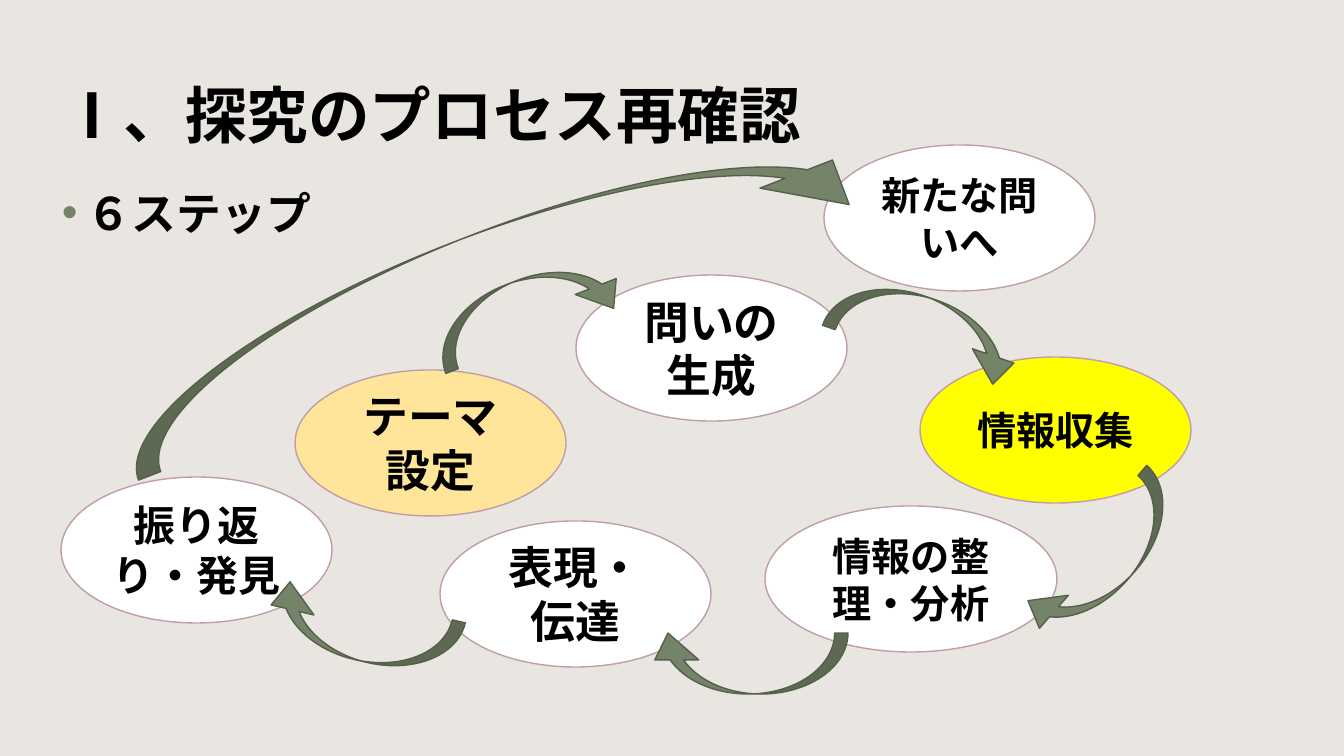
from lxml import etree
from pptx import Presentation
from pptx import util as u
from pptx.dml.color import RGBColor
from pptx.enum import lang, shapes, text
from pptx.oxml import ns

PX = 914400 / 100.8
COLORS = {
    "page": "E9E5E1", "text": "000000", "white": "FFFFFF", "yellow": "FFFF00",
    "cream": "FFE599", "rim": "C19DA7", "green": "758468", "dark": "55604B",
}
TITLE = ("Ⅰ、探究のプロセス再確認", (50, 40, 1202, 146), 44, "Noto Sans CJK JP")
SUBTITLE = ("６ステップ", (50, 166, 1243, 511), 32, "Arial")
INDENT = 25
STEP_WIDTH, STEP_HEIGHT = 271, 146
# wording, left, top, width, size, fill
STEPS = [
    ("問いの生成", 576, 275, STEP_WIDTH, 32, "white"),
    ("情報収集", 920, 357, STEP_WIDTH, 28, "yellow"),
    ("情報の整理・分析", 765, 506, 292, 28, "white"),
    ("表現・伝達", 440, 521, STEP_WIDTH, 32, "white"),
    ("テーマ設定", 295, 370, STEP_WIDTH, 32, "cream"),
    ("新たな問いへ", 824, 145, STEP_WIDTH, 28, "white"),
    ("振り返り・発見", 61, 477, STEP_WIDTH, 30, "white"),
]
SMALL, LARGE = (202, 61), (801, 108)
# left, top, size, rotation
ARROWS = [
    (428, 278, SMALL, 338.8),
    (827, 299, SMALL, 19.1),
    (646, 633, SMALL, 180),
    (1002, 531, SMALL, 131.3),
    (259, 599, SMALL, 193.2),
    (92, 231, LARGE, 338.8),
]
ARROW_BEND = (0.22, 0.72, 0.44)


def px(*lengths):
    return [u.Emu(round(length * PX)) for length in lengths]


def color(name):
    return RGBColor.from_string(COLORS[name])


def write(para, wording, size, face):
    span = para.add_run()
    span.text = wording
    font = span.font
    font.size, font.bold, font.name = u.Pt(size), True, face
    font.color.rgb = color("text")
    font.language_id = lang.MSO_LANGUAGE_ID.JAPANESE
    etree.SubElement(span._r.get_or_add_rPr(), ns.qn("a:ea"), typeface=face)


def add_heading(page, wording, place, size, face, anchor):
    frame = page.shapes.add_textbox(*px(*place)).text_frame
    frame.word_wrap = True
    frame.vertical_anchor = anchor
    frame.margin_left, frame.margin_top, frame.margin_right, frame.margin_bottom = px(12, 12, 12, 10)
    para = frame.paragraphs[0]
    write(para, wording, size, face)
    return para


def add_bullet(para):
    (indent,) = px(INDENT)
    props = para._p.get_or_add_pPr()
    props.set("marL", str(indent))
    props.set("indent", str(-indent))
    tint = etree.SubElement(props, ns.qn("a:buClr"))
    etree.SubElement(tint, ns.qn("a:srgbClr"), val=COLORS["green"])
    etree.SubElement(props, ns.qn("a:buFont"), typeface="Arial")
    etree.SubElement(props, ns.qn("a:buChar"), char="•")


def add_figure(page, kind, place, fill, line):
    figure = page.shapes.add_shape(kind, *px(*place))
    figure.shadow.inherit = False
    figure.fill.solid()
    figure.fill.fore_color.rgb = color(fill)
    figure.line.color.rgb = color(line)
    figure.line.width = u.Pt(1)
    return figure


def main():
    deck = Presentation()
    deck.slide_width, deck.slide_height = px(1344, 756)
    page = deck.slides.add_slide(deck.slide_layouts[6])
    page.background.fill.solid()
    page.background.fill.fore_color.rgb = color("page")

    add_heading(page, *TITLE, text.MSO_ANCHOR.MIDDLE)
    para = add_heading(page, *SUBTITLE, text.MSO_ANCHOR.TOP)
    para.line_spacing = 1.14
    add_bullet(para)

    for wording, left, top, width, size, fill in STEPS:
        place = (left, top, width, STEP_HEIGHT)
        step = add_figure(page, shapes.MSO_SHAPE.OVAL, place, fill, "rim")
        step.text_frame.word_wrap = True
        step.text_frame.vertical_anchor = text.MSO_ANCHOR.MIDDLE
        para = step.text_frame.paragraphs[0]
        para.alignment = text.PP_ALIGN.CENTER
        write(para, wording, size, "Arial")

    for left, top, size, rotation in ARROWS:
        arrow = add_figure(page, shapes.MSO_SHAPE.CURVED_DOWN_ARROW, (left, top, *size), "green", "dark")
        arrow.rotation = rotation
        for index, bend in enumerate(ARROW_BEND):
            arrow.adjustments[index] = bend

    deck.save("out.pptx")


if __name__ == "__main__":
    main()
